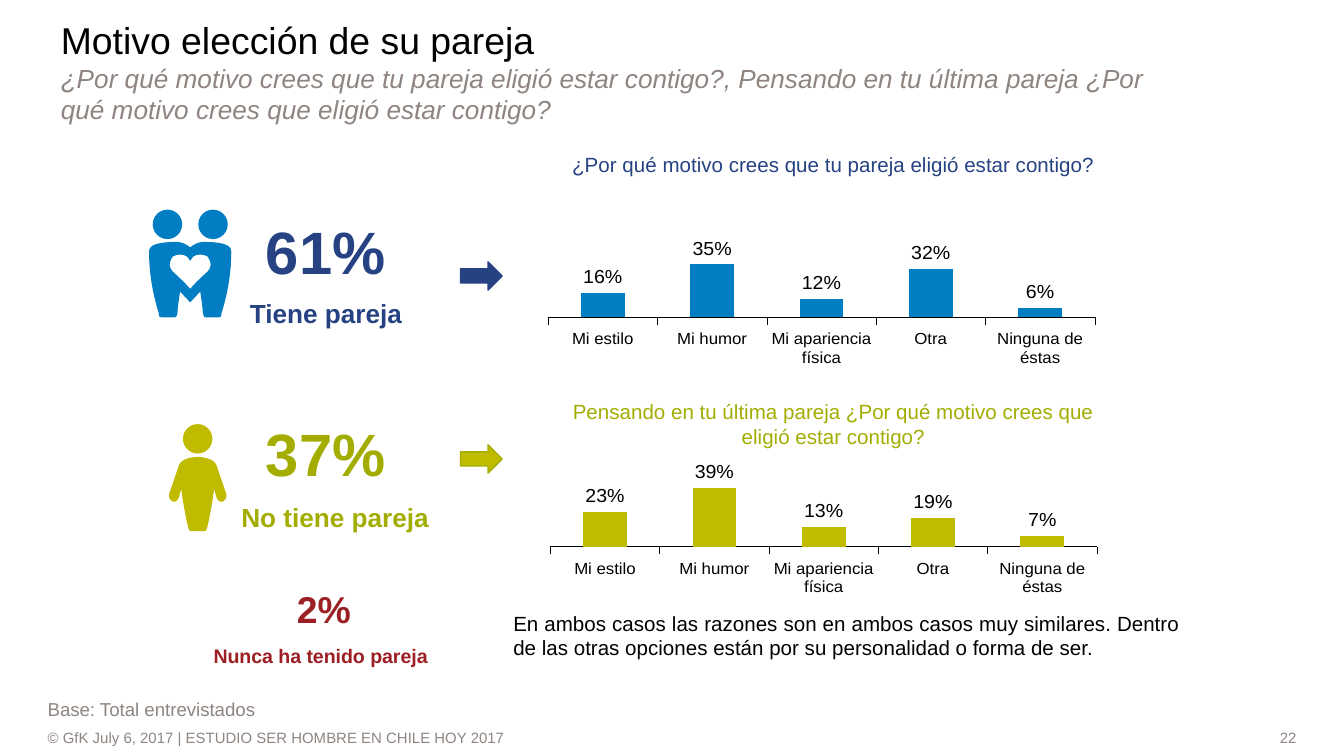
import dataclasses

import pptx
import pptx.chart.data
import pptx.dml.color
import pptx.enum.chart
import pptx.enum.shapes
import pptx.enum.text
import pptx.oxml
import pptx.oxml.ns
import pptx.util

Pt = pptx.util.Pt
SHAPE = pptx.enum.shapes.MSO_SHAPE
ALIGN = pptx.enum.text.PP_ALIGN
ANCHOR = pptx.enum.text.MSO_ANCHOR

COLORS = {
    "black": "000000", "white": "FFFFFF", "gray": "8E8581", "blue": "007DC3",
    "navy": "264283", "olive": "C1BB00", "green": "A2AD00", "red": "9B1F23",
}
CATEGORIES = ["Mi estilo", "Mi humor", "Mi apariencia física", "Otra", "Ninguna de éstas"]
PERCENT = "###0%"
PADDING = (7.2, 3.6, 7.2, 3.6)
NO_PADDING = (0, 0, 0, 0)
LEFT = 25.5


@dataclasses.dataclass
class Group:
    """One share of respondents: a figure in percent and its caption."""
    share: str
    share_box: tuple[float, float, float, float]
    share_size: float
    caption: str
    caption_box: tuple[float, float, float, float]
    caption_size: float
    color: str


@dataclasses.dataclass
class Reason:
    """One question with its arrow and column chart."""
    question: str
    question_box: tuple[float, float, float, float]
    color: str
    fill: str
    arrow_fill: str
    arrow_top: float
    chart_left: float
    chart_top: float
    values: list[float]


@dataclasses.dataclass
class Person:
    """Heads plus a body mirrored about a vertical axis.

    Each half outline lists points (x, y) and Bezier curves
    (x1, y1, x2, y2, x, y), with x measured from the axis.
    """
    axis: float
    head_offsets: list[float]
    head_top: float
    halves: list[list[tuple]]
    fill: str


GROUPS = [
    Group("61%", (135.4, 111.6, 79.2, 46), 32, "Tiene pareja", (45.1, 155.9, 259.2, 24.5), 14, "navy"),
    Group("37%", (135.4, 219.6, 79.2, 46), 32, "No tiene pareja", (50, 265, 259.2, 24.5), 14, "green"),
    Group("2%", (151.9, 310.3, 43.9, 31.7), 20, "Nunca ha tenido pareja", (42.3, 341.6, 259.2, 20.9), 10.5, "red"),
]
REASONS = [
    Reason("¿Por qué motivo crees que tu pareja eligió estar contigo?", (294.9, 77.8, 303.1, 20.9),
           "navy", "blue", "navy", 140.3, 288.4, 88.9, [0.16, 0.35, 0.12, 0.32, 0.06]),
    Reason("Pensando en tu última pareja ¿Por qué motivo crees que eligió estar contigo?",
           (294.9, 210.2, 303.1, 33.8), "green", "olive", "olive", 238.3, 289.6, 211.8,
           [0.23, 0.39, 0.13, 0.19, 0.07]),
]
COUPLE_BODY = [
    (0, 132.5), (1.8, 131, 4.7, 129.6, 6.8, 129.6), (16.8, 129.6, 22, 131, 22, 134.6),
    (22, 134.6, 22.6, 149.8, 16.8, 167.8), (16.8, 170, 16.1, 170, 15.4, 170), (8.2, 170),
    (7.5, 170, 7.5, 170, 6.8, 167.8), (6.8, 165.6, 6.1, 161, 5.4, 156.2), (0, 162),
]
HEART = [
    (0, 154.8), (2.2, 151.9, 9.4, 145.4, 9.4, 145.4), (10.4, 144, 11, 143.3, 11, 141.8),
    (11, 140.4, 10.4, 139, 9.4, 137.5), (7.2, 136, 3.6, 136, 1.6, 137.5), (0, 139.7),
]
SINGLE_BODY = [
    (0, 244.8), (5.2, 244.8, 9.4, 247, 10, 249.1), (15.4, 265),
    (15.8, 266.4, 15, 267.8, 13.7, 268.6), (12.2, 269.3, 10.8, 268.6, 10, 266.4), (8.8, 262),
    (8, 268.6, 6.5, 277, 5, 283), (4.3, 284.6, 4.3, 284.6, 3.5, 284.6), (0, 284.6),
]
PEOPLE = [
    Person(101.9, [-12.2, 12.2], 112.3, [COUPLE_BODY, HEART], "blue"),
    Person(105.9, [0], 227.2, [SINGLE_BODY], "olive"),
]


def rgb(name: str) -> pptx.dml.color.RGBColor:
    return pptx.dml.color.RGBColor.from_string(COLORS[name])


def paint(sp, fill: str, line: str | None = None) -> None:
    sp.shadow.inherit = False
    sp.fill.solid()
    sp.fill.fore_color.rgb = rgb(fill)
    if line:
        sp.line.color.rgb = rgb(line)
        sp.line.width = Pt(0.75)
    else:
        sp.line.fill.background()


def add_text(s, box, text: str, *, size=11, color="black", bold=False, italic=False, align=ALIGN.LEFT,
             anchor=ANCHOR.TOP, padding=PADDING, wrap=True, fill=None, tf=None):
    """Write a paragraph in a new text box, or append it to tf."""
    if tf is None:
        sp = s.shapes.add_textbox(*map(Pt, box))
        if fill:
            paint(sp, fill)
        tf = sp.text_frame
        tf.word_wrap = wrap
        tf.vertical_anchor = anchor
        tf.margin_left, tf.margin_top, tf.margin_right, tf.margin_bottom = map(Pt, padding)
        p = tf.paragraphs[0]
    else:
        p = tf.add_paragraph()
    p.alignment = align
    r = p.add_run()
    r.text = text
    set_font(r.font, size, color, bold)
    r.font.italic = italic
    return tf


def set_font(font, size: float, color: str = "black", bold: bool = False) -> None:
    font.name, font.size, font.bold = "Arial", Pt(size), bold
    font.color.rgb = rgb(color)


def mirror(half: list[tuple]) -> list[list[tuple[float, float]]]:
    """Return the segments of the whole outline, each a list of points."""
    right = [list(zip(seg[::2], seg[1::2])) for seg in half]
    left = [[(-x, y) for x, y in seg[-2::-1] + [prev[-1]]]
            for prev, seg in reversed(list(zip(right, right[1:])))]
    return right + left


def add_person(s, person: Person) -> None:
    for dx in person.head_offsets:
        paint(s.shapes.add_shape(SHAPE.OVAL, Pt(person.axis + dx - 7.9), Pt(person.head_top),
                                 Pt(15.8), Pt(15.8)), person.fill)
    builder, segments = None, []
    for half in person.halves:
        outline = [[(Pt(person.axis + x), Pt(y)) for x, y in seg] for seg in mirror(half)]
        start = outline[0][-1]
        if builder is None:
            builder = s.shapes.build_freeform(*start)
        else:
            builder.move_to(*start)
        builder.add_line_segments([seg[-1] for seg in outline[1:]], close=True)
        segments += outline[1:]
    sp = builder.convert_to_shape()
    # Turn the lines that stand for curves into Bezier segments
    lines = list(sp._element.iter(pptx.oxml.ns.qn("a:lnTo")))
    for line, seg in zip(lines, segments):
        if len(seg) == 3:
            pts = "".join(f'<a:pt x="{x - sp.left}" y="{y - sp.top}"/>' for x, y in seg)
            line.getparent().replace(line, pptx.oxml.parse_xml(
                f'<a:cubicBezTo {pptx.oxml.ns.nsdecls("a")}>{pts}</a:cubicBezTo>'))
    paint(sp, person.fill)


def add_reason_chart(s, reason: Reason) -> None:
    data = pptx.chart.data.CategoryChartData(number_format=PERCENT)
    data.categories = CATEGORIES
    data.add_series("Series 1", reason.values)
    chart = s.shapes.add_chart(pptx.enum.chart.XL_CHART_TYPE.COLUMN_CLUSTERED, Pt(reason.chart_left),
                               Pt(reason.chart_top), Pt(309.6), Pt(108), data).chart
    chart.has_legend = chart.has_title = False
    chart.font.name, chart.font.size, chart.font.bold = "Arial Narrow", Pt(12), True
    chart.font.color.rgb = rgb("black")
    # Axes
    cat, val = chart.category_axis, chart.value_axis
    set_font(cat.tick_labels.font, 9)
    cat.major_tick_mark = pptx.enum.chart.XL_TICK_MARK.OUTSIDE
    cat.format.line.color.rgb = rgb("black")
    cat.format.line.width = Pt(0.25)
    val.minimum_scale, val.maximum_scale, val.major_unit = 0, 1, 25
    val.has_major_gridlines = val.visible = False
    # Columns and labels
    plot = chart.plots[0]
    plot.gap_width, plot.vary_by_categories = 150, False
    fill = plot.series[0].format.fill
    fill.solid()
    fill.fore_color.rgb = rgb(reason.fill)
    plot.has_data_labels = True
    labels = plot.data_labels
    labels.show_value = True
    labels.number_format, labels.number_format_is_linked = PERCENT, False
    labels.position = pptx.enum.chart.XL_LABEL_POSITION.OUTSIDE_END
    set_font(labels.font, 10.5)
    # Fixed inner plot area
    area = plot._element.getparent()
    for old in area.findall(pptx.oxml.ns.qn("c:layout")):
        area.remove(old)
    sizes = "".join(f'<c:{k} val="{v}"/>' for k, v in (
        ("layoutTarget", "inner"), ("xMode", "edge"), ("yMode", "edge"),
        ("x", 0.017), ("y", 0), ("w", 0.946), ("h", 0.781)))
    area.insert(0, pptx.oxml.parse_xml(
        f'<c:layout {pptx.oxml.ns.nsdecls("c")}><c:manualLayout>{sizes}</c:manualLayout></c:layout>'))


def main() -> None:
    prs = pptx.Presentation()
    prs.slide_width, prs.slide_height = Pt(720), Pt(405)
    s = prs.slides.add_slide(prs.slide_layouts[6])
    # Footer
    footer = dict(size=8, color="gray", anchor=ANCHOR.MIDDLE, padding=NO_PADDING, fill="white")
    add_text(s, (592.3, 389.5, 102.2, 11.5), "22", align=ALIGN.RIGHT, **footer)
    add_text(s, (LEFT, 389.5, 555.8, 11.5), "© GfK July 6, 2017 | ESTUDIO SER HOMBRE EN CHILE HOY 2017", **footer)
    # Title and question
    tf = add_text(s, (LEFT, 15.4, 607, 45.4), "Motivo elección de su pareja", size=20, anchor=ANCHOR.MIDDLE)
    add_text(s, None, "¿Por qué motivo crees que tu pareja eligió estar contigo?, Pensando en tu última pareja "
             "¿Por qué motivo crees que eligió estar contigo?", size=14, color="gray", italic=True, tf=tf)
    # Charts, arrows and questions
    for reason in REASONS:
        add_reason_chart(s, reason)
        paint(s.shapes.add_shape(SHAPE.RIGHT_ARROW, Pt(246.7), Pt(reason.arrow_top), Pt(22.3), Pt(15.1)),
              reason.arrow_fill, reason.color)
        add_text(s, reason.question_box, reason.question, color=reason.color, align=ALIGN.CENTER)
    # People and shares
    for person in PEOPLE:
        add_person(s, person)
    for g in GROUPS:
        add_text(s, g.caption_box, g.caption, size=g.caption_size, color=g.color, bold=True, align=ALIGN.CENTER)
        add_text(s, g.share_box, g.share, size=g.share_size, color=g.color, bold=True, wrap=False)
    # Conclusion and base
    add_text(s, (275, 327.2, 357.1, 41), "En ambos casos las razones son en ambos casos muy similares. Dentro de "
             "las otras opciones están por su personalidad o forma de ser.", align=ALIGN.JUSTIFY, padding=NO_PADDING)
    add_text(s, (LEFT, 372.2, 668.9, 11.5), "Base: Total entrevistados", size=10, color="gray",
             padding=(0, 1.44, 0, 0))
    prs.save("out.pptx")


if __name__ == "__main__":
    main()
